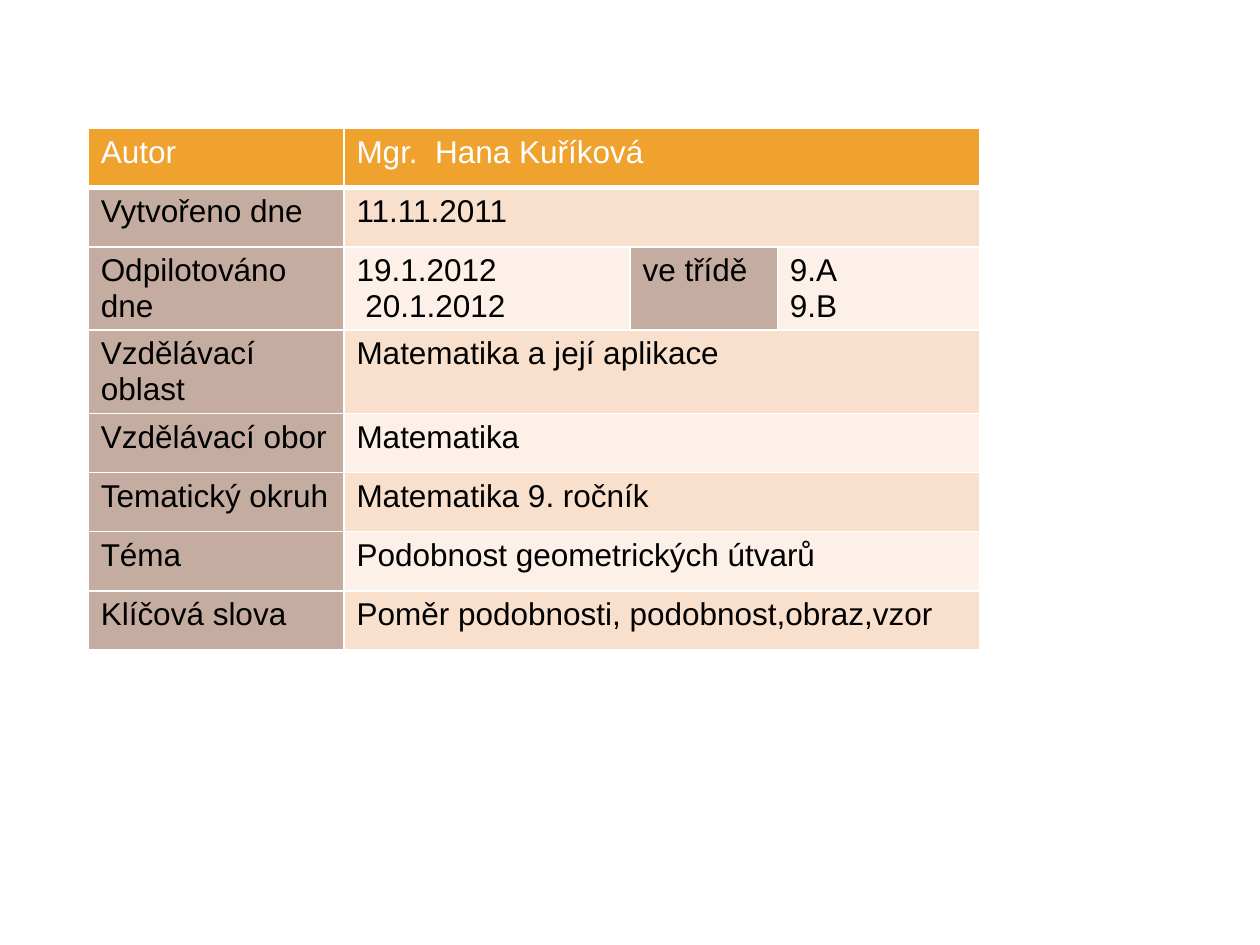
from lxml.etree import fromstring
from pptx import Presentation
from pptx.dml.color import RGBColor
from pptx.oxml.ns import nsdecls
from pptx.util import Inches, Pt

COLORS = {
    "header": "F0A22E", "label": "C4ADA0", "dark_band": "F9E0CD",
    "light_band": "FCF0E8", "border": "FFFFFF", "header_text": "FFFFFF", "text": "000000",
}
COLUMN_WIDTHS = [2.03, 2.27, 1.17, 1.61]
ROW_HEIGHT = 0.47
ROWS = [
    ["Autor", "Mgr.  Hana Kuříková"],
    ["Vytvořeno dne", "11.11.2011"],
    ["Odpilotováno dne", "19.1.2012\n 20.1.2012", "ve třídě", "9.A\n9.B"],
    ["Vzdělávací oblast", "Matematika a její aplikace"],
    ["Vzdělávací obor", "Matematika"],
    ["Tematický okruh", "Matematika 9. ročník"],
    ["Téma", "Podobnost geometrických útvarů"],
    ["Klíčová slova", "Poměr podobnosti, podobnost,obraz,vzor"],
]


def set_borders(cell, bottom_width):
    properties = cell._tc.get_or_add_tcPr()
    widths = {"lnL": 1, "lnR": 1, "lnT": 1, "lnB": bottom_width}
    for position, (side, width) in enumerate(widths.items()):
        properties.insert(position, fromstring(
            f'<a:{side} {nsdecls("a")} w="{Pt(width)}"><a:solidFill>'
            f'<a:srgbClr val="{COLORS["border"]}"/></a:solidFill></a:{side}>'))


def fill_color(row, column):
    if row == 0:
        return COLORS["header"]
    if column % 2 == 0:
        return COLORS["label"]
    return COLORS["dark_band" if row % 2 else "light_band"]


def write_cell(cell, text, fill, text_color):
    cell.fill.solid()
    cell.fill.fore_color.rgb = RGBColor.from_string(fill)
    cell.text = text
    font_format = {"name": "Arial", "size": Pt(18), "bold": False}
    for para in cell.text_frame.paragraphs:
        for span in para.runs:
            for name, value in font_format.items():
                setattr(span.font, name, value)
            span.font.color.rgb = RGBColor.from_string(text_color)


def add_lesson_table(page, left, top):
    """Add the lesson details, with label columns beside value columns."""
    table = page.shapes.add_table(
        len(ROWS), len(COLUMN_WIDTHS), Inches(left), Inches(top),
        Inches(sum(COLUMN_WIDTHS)), Inches(ROW_HEIGHT * len(ROWS))).table
    for column, width in zip(table.columns, COLUMN_WIDTHS):
        column.width = Inches(width)
    for row, texts in enumerate(ROWS):
        table.rows[row].height = Inches(ROW_HEIGHT)
        if len(texts) == 2:
            table.cell(row, 1).merge(table.cell(row, len(COLUMN_WIDTHS) - 1))
        text_color = COLORS["text" if row else "header_text"]
        for column, text in enumerate(texts):
            write_cell(table.cell(row, column), text, fill_color(row, column), text_color)
        for cell in table.rows[row].cells:
            set_borders(cell, bottom_width=1 if row else 3)


def main():
    deck = Presentation()
    deck.slide_width, deck.slide_height = Inches(10), Inches(7.5)
    page = deck.slides.add_slide(deck.slide_layouts[6])
    add_lesson_table(page, left=0.7, top=1.02)
    deck.save("out.pptx")


if __name__ == "__main__":
    main()
